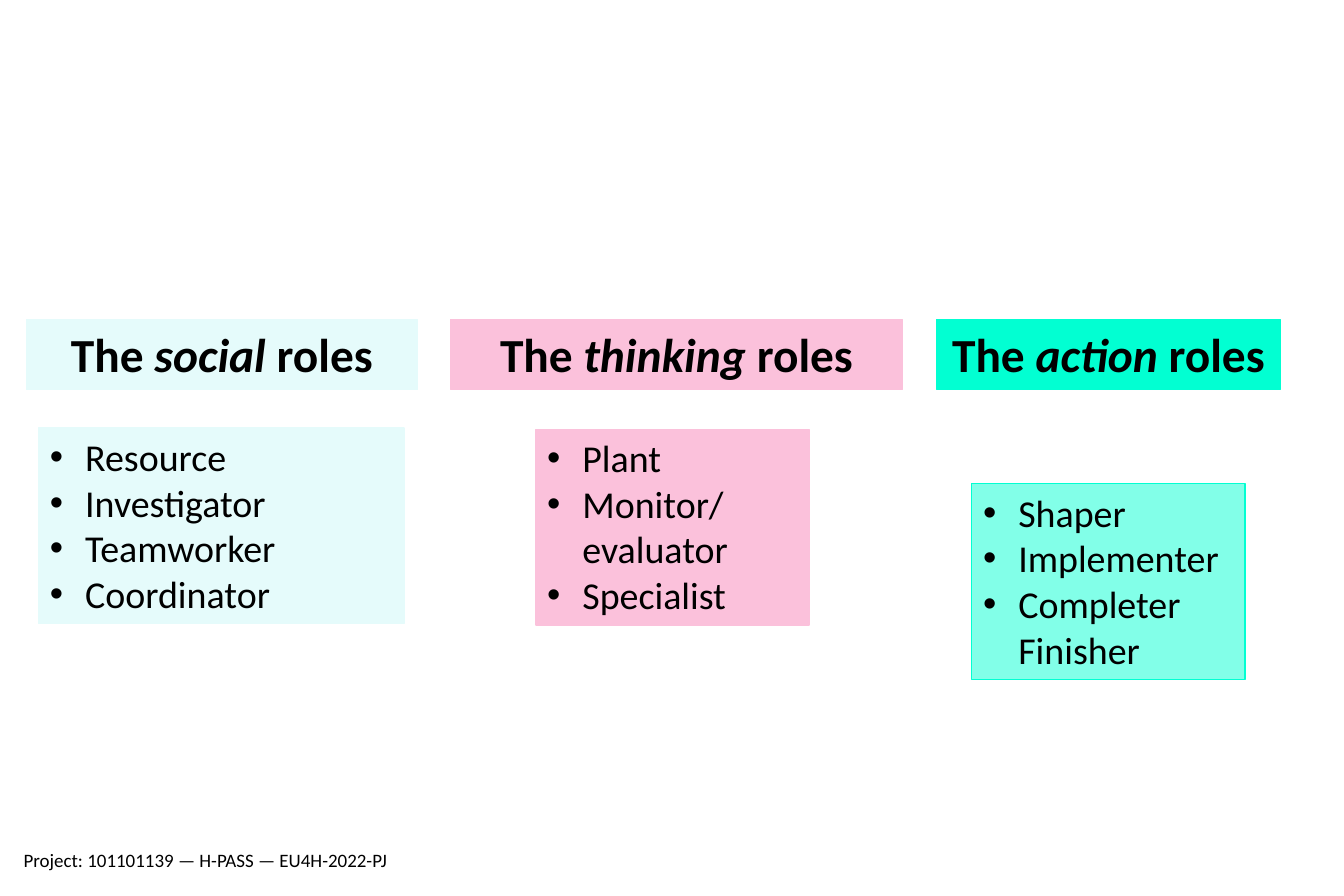
from pptx import Presentation
from pptx import util as u
from pptx.dml import color
from pptx.enum import shapes, text
from pptx.oxml import ns
from lxml import etree

INK = "000000"
ALIGN = text.PP_ALIGN

# Each team: role word, colour, heading (left, width), list (left, top, width), alignment, opacity, roles
TEAMS = [
    ("social", "E5FBFB", (0.23, 3.44), (0.34, 3.76, 3.21), ALIGN.LEFT, 100,
     ["Resource", "Investigator", "Teamworker", "Coordinator"]),
    ("thinking", "FBC1DB", (3.96, 3.97), (4.71, 3.77, 2.4), ALIGN.JUSTIFY, 100,
     ["Plant", "Monitor/ evaluator", "Specialist"]),
    ("action", "02FFD2", (8.23, 3.02), (8.54, 4.25, 2.4), ALIGN.LEFT, 49,
     ["Shaper", "Implementer", "Completer Finisher"]),
]


def rgb(code):
    return color.RGBColor.from_string(code)


def style(font, size, **extra):
    font.color.rgb = rgb(INK)
    for key, val in {"name": "Calibri", "size": u.Pt(size), **extra}.items():
        setattr(font, key, val)


def panel(group, place, hue, alpha=100):
    """Add a filled rectangle and return its text frame."""
    box = group.shapes.add_shape(shapes.MSO_SHAPE.RECTANGLE, *map(u.Inches, place))
    box.shadow.inherit = False
    box.fill.solid()
    box.fill.fore_color.rgb = box.line.color.rgb = rgb(hue)
    box.line.width = u.Pt(0.75)
    if alpha < 100:
        tint = box.fill._xPr.find(ns.qn("a:solidFill"))[0]
        etree.SubElement(tint, ns.qn("a:alpha"), val=str(alpha * 1000))
    frame = box.text_frame
    frame.word_wrap = True
    frame.auto_size = text.MSO_AUTO_SIZE.SHAPE_TO_FIT_TEXT
    frame.vertical_anchor = text.MSO_ANCHOR.TOP
    return frame


def bullet(para):
    props = para._p.get_or_add_pPr()
    indent = u.Inches(0.31)
    props.set("marL", str(indent))
    props.set("indent", str(-indent))
    etree.SubElement(props, ns.qn("a:buFont"), typeface="Arial")
    etree.SubElement(props, ns.qn("a:buChar"), char="•")


def roster(group, place, hue, alpha, align, roles):
    frame = panel(group, place, hue, alpha)
    for i, role in enumerate(roles):
        para = frame.add_paragraph() if i else frame.paragraphs[0]
        para.alignment = align
        bullet(para)
        run = para.add_run()
        run.text = role
        style(run.font, 24)


def heading(group, place, hue, word):
    para = panel(group, place, hue).paragraphs[0]
    para.alignment = ALIGN.CENTER
    for part in ("The ", word, " roles"):
        run = para.add_run()
        run.text = part
        style(run.font, 30, bold=True, italic=part == word)


def footer(slide, words):
    box = slide.shapes.add_textbox(*map(u.Inches, (0.11, 7.4, 3.63, 0.27)))
    box.text_frame.word_wrap = True
    run = box.text_frame.paragraphs[0].add_run()
    run.text = words
    style(run.font, 12)


def main():
    deck = Presentation()
    deck.slide_width, deck.slide_height = u.Inches(11.81), u.Inches(7.87)
    slide = deck.slides.add_slide(deck.slide_layouts[6])

    # Project line
    footer(slide, "Project: 101101139 — H-PASS — EU4H-2022-PJ")

    # One group per team: list and heading
    for word, hue, (left, width), spot, align, alpha, roles in TEAMS:
        group = slide.shapes.add_group_shape()
        roster(group, (*spot, 1.72), hue, alpha, align, roles)
        heading(group, (left, 2.81, width, 0.61), hue, word)

    deck.save("out.pptx")


if __name__ == "__main__":
    main()
